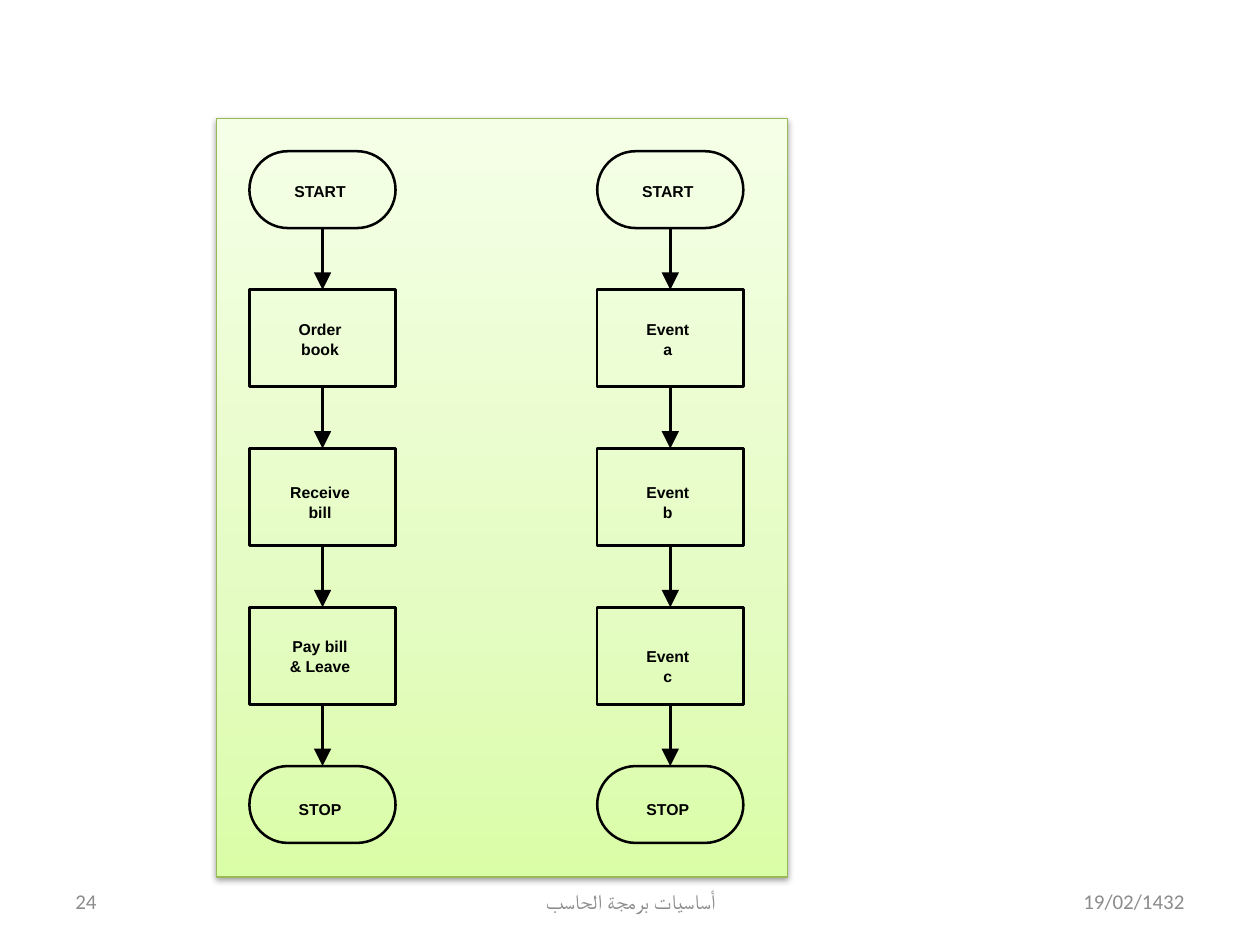
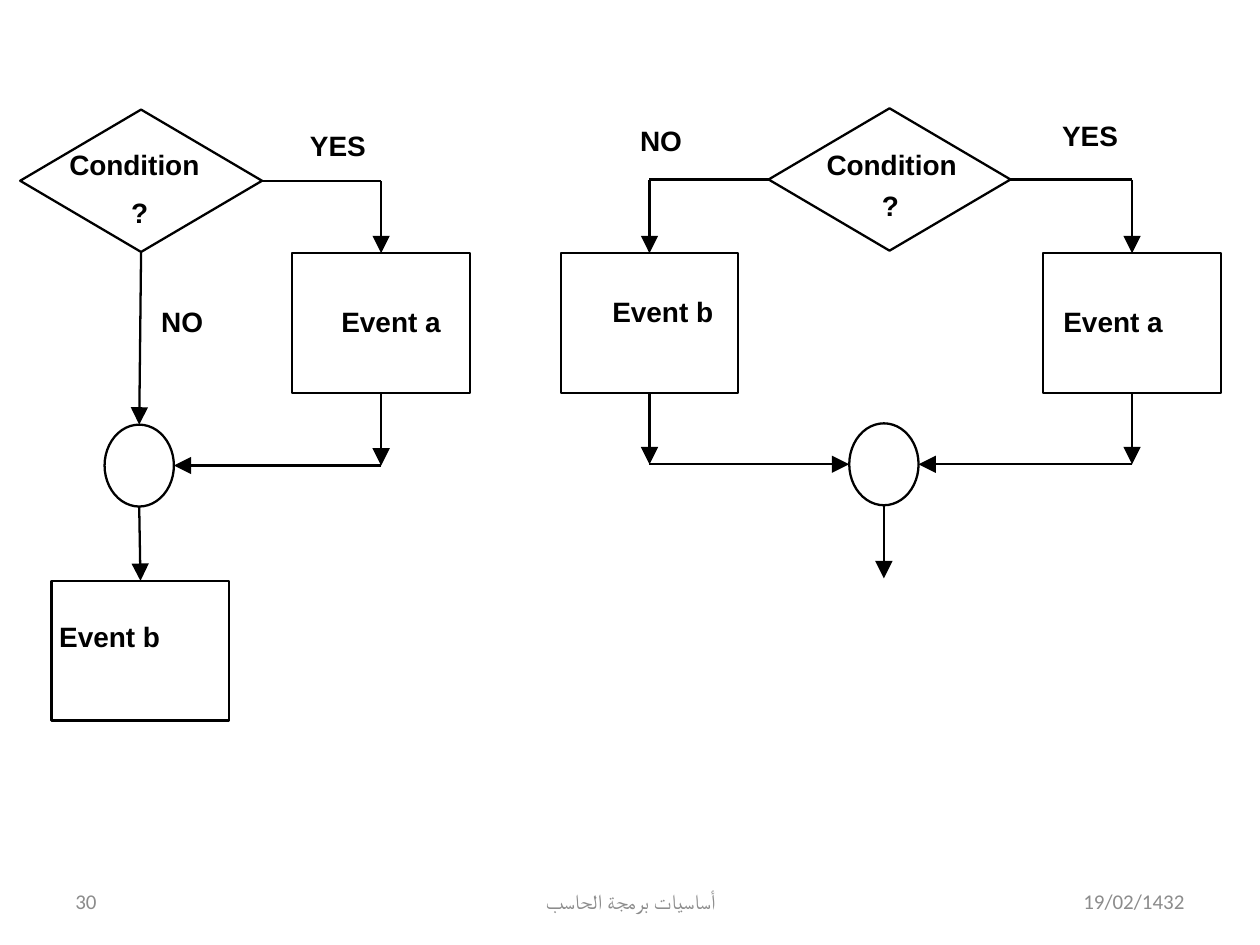
from lxml.etree import SubElement
from pptx import Presentation
from pptx.dml.color import RGBColor
from pptx.enum.shapes import MSO_CONNECTOR, MSO_SHAPE
from pptx.enum.text import MSO_ANCHOR, PP_ALIGN
from pptx.oxml.ns import qn
from pptx.util import Inches, Pt

BLACK = RGBColor(0x00, 0x00, 0x00)
FOOTER_GREY = RGBColor(0x8C, 0x8C, 0x8C)
PANEL_LINE = RGBColor(0x98, 0xB9, 0x55)
PANEL_STOPS = (
    (0, RGBColor(0xDA, 0xFD, 0xA7)),
    (35, RGBColor(0xE4, 0xFC, 0xC2)),
    (100, RGBColor(0xF5, 0xFF, 0xE7)),
)

TOP, LEFT, BOTTOM, RIGHT = range(4)
LABEL_FONT = {"name": "Arial", "bold": True}
FOOTER_FONT = {"name": "Calibri", "size": Pt(12)}
COURSE = "أساسيات برمجة الحاسب"
DATE = "19/02/1432"


def side(shape, site):
    """Return the middle of a side of the shape as (x, y)."""
    middle_x = shape.left + shape.width // 2
    middle_y = shape.top + shape.height // 2
    return {
        TOP: (middle_x, shape.top),
        LEFT: (shape.left, middle_y),
        BOTTOM: (middle_x, shape.top + shape.height),
        RIGHT: (shape.left + shape.width, middle_y),
    }[site]


class FlowchartDeck:
    """Holds the presentation, the current slide and its line and text style."""

    def __init__(self):
        self.presentation = Presentation()
        self.presentation.slide_width = Inches(10)
        self.presentation.slide_height = Inches(7.5)
        self.slide = None
        self.line_width = None
        self.label_size = None

    def new_slide(self, number, line_width, label_size):
        self.slide = self.presentation.slides.add_slide(
            self.presentation.slide_layouts[6])
        self.line_width = Pt(line_width)
        self.label_size = Pt(label_size)
        self.footer(7.17, 2.33, DATE, PP_ALIGN.RIGHT)
        self.footer(0.5, 2.33, str(number), PP_ALIGN.LEFT)
        course = self.footer(3.42, 3.17, COURSE, PP_ALIGN.CENTER)
        course._p.get_or_add_pPr().set("rtl", "1")

    def text(self, left, top, width, height, content, font, color, align):
        box = self.slide.shapes.add_textbox(
            Inches(left), Inches(top), Inches(width), Inches(height))
        box.text_frame.word_wrap = True
        paragraph = box.text_frame.paragraphs[0]
        paragraph.alignment = align
        run = paragraph.add_run()
        run.text = content
        for name, value in font.items():
            setattr(run.font, name, value)
        run.font.color.rgb = color
        return box.text_frame

    def footer(self, left, width, content, align):
        frame = self.text(left, 6.95, width, 0.4, content,
                          FOOTER_FONT, FOOTER_GREY, align)
        frame.vertical_anchor = MSO_ANCHOR.MIDDLE
        return frame.paragraphs[0]

    def label(self, left, top, width, height, content, align=PP_ALIGN.LEFT):
        font = {**LABEL_FONT, "size": self.label_size}
        frame = self.text(left, top, width, height, content, font, BLACK, align)
        for margin in ("left", "top", "right", "bottom"):
            setattr(frame, f"margin_{margin}", 0)

    def node(self, kind, left, top, width, height):
        """Add an unfilled outline of the flowchart."""
        shape = self.slide.shapes.add_shape(
            kind, Inches(left), Inches(top), Inches(width), Inches(height))
        shape.shadow.inherit = False
        shape.fill.background()
        shape.line.color.rgb = BLACK
        shape.line.width = self.line_width
        return shape

    def panel(self, left, top, width, height):
        """Add the green gradient background with its soft shadow."""
        panel = self.node(MSO_SHAPE.RECTANGLE, left, top, width, height)
        panel.line.color.rgb = PANEL_LINE
        panel.line.width = Pt(0.75)
        panel.fill.gradient()
        panel.fill.gradient_angle = 90
        properties = panel.element.spPr
        stop_list = properties.find(f".//{qn('a:gsLst')}")
        for stop in list(stop_list):
            stop_list.remove(stop)
        for position, color in PANEL_STOPS:
            stop = SubElement(stop_list, qn("a:gs"), pos=str(position * 1000))
            SubElement(stop, qn("a:srgbClr"), val=str(color))
        shadow = SubElement(
            properties.find(qn("a:effectLst")), qn("a:outerShdw"),
            blurRad=str(Pt(3.1)), dist=str(Pt(1.6)), dir="5400000", rotWithShape="0")
        shadow_color = SubElement(shadow, qn("a:srgbClr"), val=str(BLACK))
        SubElement(shadow_color, qn("a:alpha"), val="38000")

    def connect(self, begin, end, arrow=True):
        """Join two ends, each a point (x, y) or a pair (shape, side)."""
        joined = [hasattr(target[0], "shape_id") for target in (begin, end)]
        start, finish = (side(*target) if is_shape else target
                         for target, is_shape in zip((begin, end), joined))
        connector = self.slide.shapes.add_connector(
            MSO_CONNECTOR.STRAIGHT, *start, *finish)
        if joined[0]:
            connector.begin_connect(*begin)
        if joined[1]:
            connector.end_connect(*end)
        connector.line.color.rgb = BLACK
        connector.line.width = self.line_width
        properties = connector.element.spPr
        if arrow:
            SubElement(properties.find(qn("a:ln")), qn("a:tailEnd"),
                       type="triangle", w="lg", len="lg")
        SubElement(properties, qn("a:effectLst"))

    def condition(self, left, top):
        return self.node(MSO_SHAPE.DIAMOND, left, top, 1.92, 1.13)

    def event(self, left, top=2.01):
        return self.node(MSO_SHAPE.RECTANGLE, left, top, 1.41, 1.11)

    def junction(self, left, top):
        return self.node(MSO_SHAPE.OVAL, left, top, 0.55, 0.65)

    def branch(self, condition, exit_side, event, junction):
        """Lead from a condition through an event to the junction."""
        event_x = side(event, TOP)[0]
        upper_corner = (event_x, side(condition, exit_side)[1])
        lower_corner = (event_x, side(junction, exit_side)[1])
        self.connect((condition, exit_side), upper_corner, arrow=False)
        self.connect(upper_corner, (event, TOP))
        self.connect((event, BOTTOM), lower_corner)
        self.connect(lower_corner, side(junction, exit_side))

    def sequence(self, left, steps):
        """Add a column of steps, each a pair of text lines and text top."""
        previous = None
        for index, (lines, text_top) in enumerate(steps):
            if index in (0, len(steps) - 1):
                kind, height = MSO_SHAPE.ROUNDED_RECTANGLE, 0.61
            else:
                kind, height = MSO_SHAPE.RECTANGLE, 0.77
            top = 1.2 if index == 0 else 2.3 + 1.26 * (index - 1)
            step = self.node(kind, left, top, 1.16, height)
            if kind == MSO_SHAPE.ROUNDED_RECTANGLE:
                step.adjustments[0] = 0.5
            if previous is not None:
                self.connect((previous, BOTTOM), (step, TOP))
            for row, line in enumerate(lines):
                self.label(left + 0.26, text_top + 0.16 * row, 0.6, 0.15,
                           line, PP_ALIGN.CENTER)
            previous = step


def build_sequence_slide(deck):
    deck.new_slide(24, line_width=1.45, label_size=9)
    deck.panel(1.72, 0.94, 4.53, 6.02)
    start, stop = (["START"], 1.44), (["STOP"], 6.35)
    deck.sequence(1.98, [
        start,
        (["Order", "book"], 2.54),
        (["Receive", "bill"], 3.83),
        (["Pay bill", "& Leave"], 5.05),
        stop,
    ])
    deck.sequence(4.74, [
        start,
        (["Event", "a"], 2.54),
        (["Event", "b"], 3.83),
        (["Event", "c"], 5.13),
        stop,
    ])


def build_selection_slide(deck):
    deck.new_slide(30, line_width=1.3, label_size=16)

    condition = deck.condition(0.16, 0.87)
    event_a = deck.event(2.32)
    junction = deck.junction(0.83, 3.37)
    event_b = deck.event(0.41, 4.61)
    deck.branch(condition, RIGHT, event_a, junction)
    deck.connect((condition, BOTTOM), side(junction, TOP))
    deck.connect(side(junction, BOTTOM), (event_b, TOP))

    condition = deck.condition(6.1, 0.86)
    event_b = deck.event(4.45)
    event_a = deck.event(8.28)
    junction = deck.junction(6.74, 3.36)
    deck.branch(condition, LEFT, event_b, junction)
    deck.branch(condition, RIGHT, event_a, junction)
    exit_x, exit_y = side(junction, BOTTOM)
    deck.connect((exit_x, exit_y), (exit_x, Inches(4.59)))

    for left, top, width, height, content in (
        (0.55, 1.17, 1.17, 0.58, "Condition"),
        (1.04, 1.55, 0.2, 0.22, "?"),
        (2.46, 1.02, 0.51, 0.49, "YES"),
        (1.28, 2.42, 0.6, 0.35, "NO"),
        (2.71, 2.42, 0.9, 0.46, "Event a"),
        (0.47, 4.92, 0.9, 0.55, "Event b"),
        (6.56, 1.17, 1.09, 0.53, "Condition"),
        (7, 1.5, 0.2, 0.22, "?"),
        (5.08, 0.98, 0.53, 0.19, "NO"),
        (8.43, 0.94, 0.71, 0.51, "YES"),
        (4.86, 2.34, 0.92, 0.57, "Event b"),
        (8.44, 2.42, 0.94, 0.48, "Event a"),
    ):
        deck.label(left, top, width, height, content)


def main():
    deck = FlowchartDeck()
    build_sequence_slide(deck)
    build_selection_slide(deck)
    deck.presentation.save("out.pptx")


if __name__ == "__main__":
    main()
